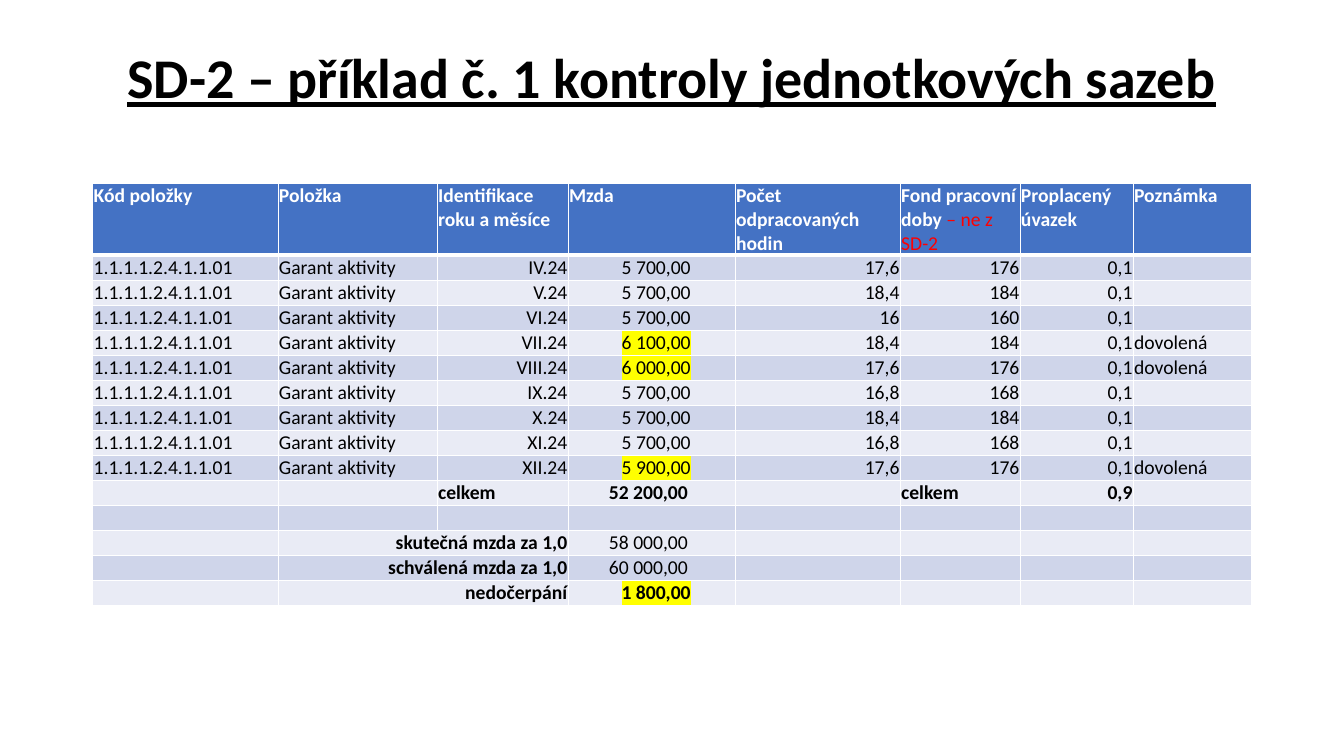
from dataclasses import dataclass

from lxml import etree
from pptx import Presentation
from pptx.dml.color import RGBColor
from pptx.enum.text import MSO_ANCHOR, PP_ALIGN
from pptx.oxml.ns import qn
from pptx.util import Cm, Pt

LEFT, CENTER, RIGHT = PP_ALIGN.LEFT, PP_ALIGN.CENTER, PP_ALIGN.RIGHT
TOP, MIDDLE, BOTTOM = MSO_ANCHOR.TOP, MSO_ANCHOR.MIDDLE, MSO_ANCHOR.BOTTOM
FONT = "Calibri"
BLACK, WHITE, RED, YELLOW = "000000", "FFFFFF", "FF0000", "FFFF00"
HEADER_FILL, BAND_FILLS = "4472C4", ("CFD5EA", "E9EBF5")
COLUMN_WIDTHS = (4.67, 4.01, 3.3, 4.21, 4.16, 3.02, 2.85, 2.97)
HEADER_HEIGHT, ROW_HEIGHT = 1.81, 0.63
MONTH_TAB, TOTAL_TAB = 3.07, 3.0
WAGE_COLUMN = 3


@dataclass
class Month:
    period: str
    wage: str
    hours: str
    fund: str
    note: str = ""


@dataclass
class Summary:
    label: str
    amount: str
    bold: bool = False
    highlight: str = ""
    tab: float = TOTAL_TAB


HEADERS = (
    "Kód položky", "Položka", "Identifikace roku a měsíce", "Mzda",
    "Počet odpracovaných hodin", "Fond pracovní doby ",
    "Proplacený úvazek", "Poznámka",
)
MONTHS = (
    Month("IV.24", "5 700,00", "17,6", "176"),
    Month("V.24", "5 700,00", "18,4", "184"),
    Month("VI.24", "5 700,00", "16", "160"),
    Month("VII.24", "6 100,00", "18,4", "184", "dovolená"),
    Month("VIII.24", "6 000,00", "17,6", "176", "dovolená"),
    Month("IX.24", "5 700,00", "16,8", "168"),
    Month("X.24", "5 700,00", "18,4", "184"),
    Month("XI.24", "5 700,00", "16,8", "168"),
    Month("XII.24", "5 900,00", "17,6", "176", "dovolená"),
)
SUMMARIES = (
    Summary("skutečná mzda za 1,0", "58 000,00"),
    Summary("schválená mzda za 1,0", "60 000,00"),
    Summary("nedočerpání", "1 800,00", True, YELLOW, MONTH_TAB),
)
TOTAL_ROW = len(MONTHS) + 1
FIRST_SUMMARY_ROW = TOTAL_ROW + 2
ROW_COUNT = FIRST_SUMMARY_ROW + len(SUMMARIES)


def rgb(value: str) -> RGBColor:
    return RGBColor.from_string(value)


def write(paragraph, text: str, *, size: float = 14, color: str = BLACK,
          bold: bool = False, underline: bool = False,
          highlight: str = "", align=LEFT) -> None:
    paragraph.alignment = align
    run = paragraph.add_run()
    run.text = text
    run.font.name = FONT
    run.font.size = Pt(size)
    run.font.bold = bold
    run.font.underline = underline
    run.font.color.rgb = rgb(color)
    if highlight:
        marker = etree.Element(qn("a:highlight"))
        etree.SubElement(marker, qn("a:srgbClr"), val=highlight)
        run.font._element.find(qn("a:solidFill")).addnext(marker)


def add_right_tab(paragraph, position: float) -> None:
    paragraph.alignment = LEFT
    tabs = etree.SubElement(paragraph._p.pPr, qn("a:tabLst"))
    etree.SubElement(tabs, qn("a:tab"), pos=str(Cm(position)), algn="r")


def style_cell(cell, row: int) -> None:
    is_header = row == 0
    cell.margin_left = cell.margin_right = cell.margin_top = Cm(0.02)
    cell.margin_bottom = 0
    cell.vertical_anchor = TOP if is_header else BOTTOM
    properties = cell._tc.get_or_add_tcPr()
    for side in ("lnL", "lnR", "lnT", "lnB"):
        thick = (is_header and side == "lnB") or (row == 1 and side == "lnT")
        border = etree.SubElement(properties, qn(f"a:{side}"),
                                  w=str(Pt(3 if thick else 1)))
        fill = etree.SubElement(border, qn("a:solidFill"))
        etree.SubElement(fill, qn("a:srgbClr"), val=WHITE)
    cell.fill.solid()
    cell.fill.fore_color.rgb = rgb(
        HEADER_FILL if is_header else BAND_FILLS[(row - 1) % 2])


def add_title(slide) -> None:
    box = slide.shapes.add_textbox(Cm(2.79), Cm(0.48), Cm(28.27), Cm(3.1))
    frame = box.text_frame
    frame.word_wrap = True
    frame.vertical_anchor = MIDDLE
    heading = frame.paragraphs[0]
    heading.line_spacing = 0.9
    write(heading, "SD-2 – příklad č. 1 kontroly jednotkových sazeb",
          size=40, bold=True, underline=True, align=CENTER)


def add_wage_table(slide) -> None:
    heights = [HEADER_HEIGHT] + [ROW_HEIGHT] * (ROW_COUNT - 1)
    table = slide.shapes.add_table(
        ROW_COUNT, len(COLUMN_WIDTHS), Cm(2.34), Cm(4.62),
        Cm(sum(COLUMN_WIDTHS)), Cm(sum(heights))).table
    for column, width in zip(table.columns, COLUMN_WIDTHS):
        column.width = Cm(width)
    for index, height in enumerate(heights):
        table.rows[index].height = Cm(height)
        for cell in table.rows[index].cells:
            style_cell(cell, index)

    def paragraph(row: int, column: int):
        return table.cell(row, column).text_frame.paragraphs[0]

    for column, header in enumerate(HEADERS):
        write(paragraph(0, column), header, color=WHITE, bold=True)
    write(paragraph(0, 5), "– ne z SD-2", color=RED)

    for row, month in enumerate(MONTHS, start=1):
        add_right_tab(paragraph(row, WAGE_COLUMN), MONTH_TAB)
        values = ("1.1.1.1.2.4.1.1.01", "Garant aktivity", month.period,
                  "\t" + month.wage, month.hours, month.fund, "0,1", month.note)
        for column, value in enumerate(values):
            if value:
                marked = column == WAGE_COLUMN and month.note
                write(paragraph(row, column), value,
                      highlight=YELLOW if marked else "",
                      align=RIGHT if column in (2, 4, 5, 6) else LEFT)

    add_right_tab(paragraph(TOTAL_ROW, WAGE_COLUMN), TOTAL_TAB)
    for column, value in ((2, "celkem"), (WAGE_COLUMN, "\t52 200,00"),
                          (5, "celkem"), (6, "0,9")):
        write(paragraph(TOTAL_ROW, column), value, bold=True,
              align=RIGHT if column == 6 else LEFT)

    for row, summary in enumerate(SUMMARIES, start=FIRST_SUMMARY_ROW):
        table.cell(row, 1).merge(table.cell(row, 2))
        write(paragraph(row, 1), summary.label, bold=True, align=RIGHT)
        amount = paragraph(row, WAGE_COLUMN)
        add_right_tab(amount, summary.tab)
        write(amount, "\t", bold=summary.bold)
        write(amount, summary.amount, bold=summary.bold,
              highlight=summary.highlight)

    for cell in table.iter_cells():
        if not cell.text:
            etree.SubElement(cell.text_frame.paragraphs[0]._p,
                             qn("a:endParaRPr"), sz="1400")


def main() -> None:
    presentation = Presentation()
    presentation.slide_width = Cm(33.87)
    presentation.slide_height = Cm(19.05)
    slide = presentation.slides.add_slide(presentation.slide_layouts[6])
    add_title(slide)
    add_wage_table(slide)
    presentation.save("out.pptx")


if __name__ == "__main__":
    main()
